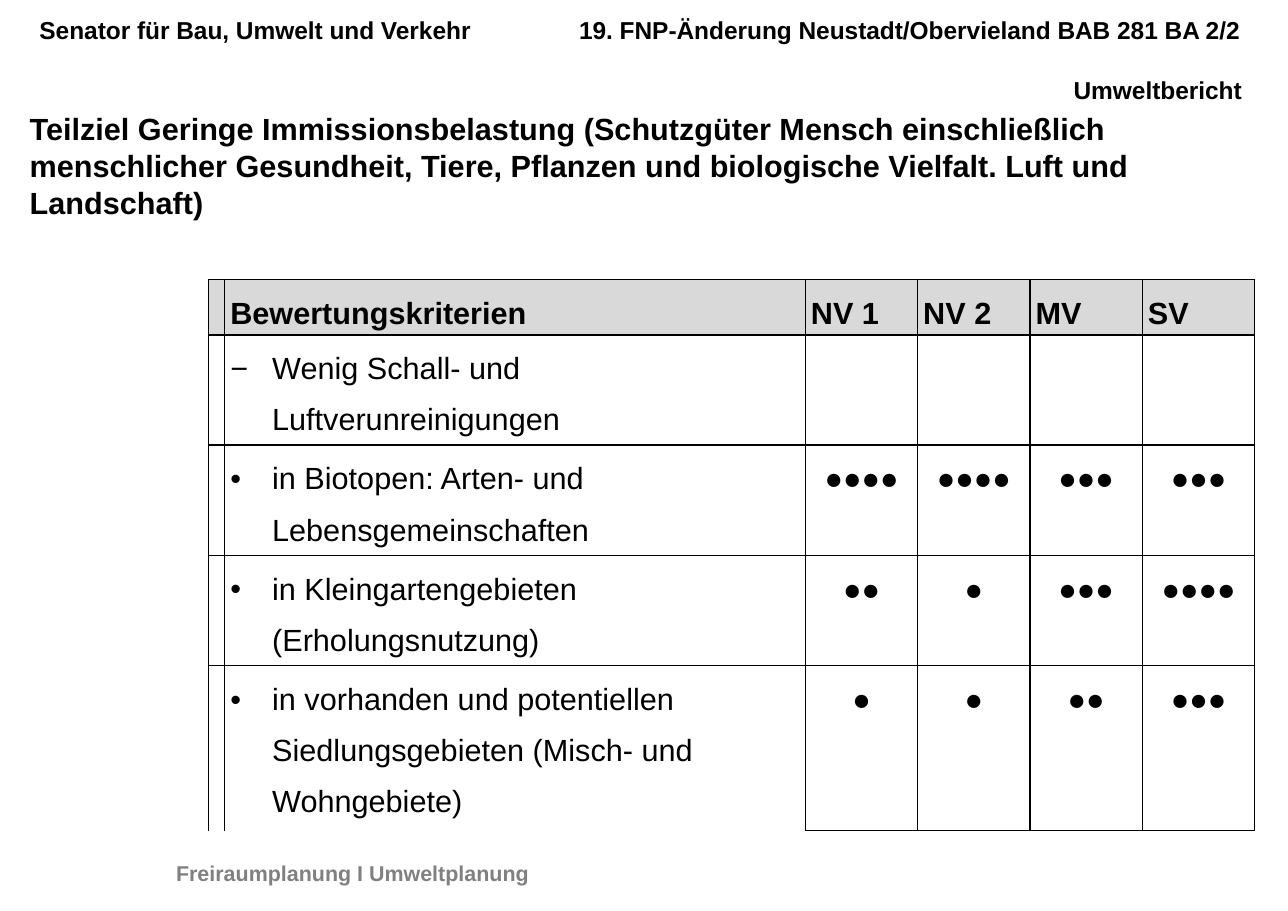
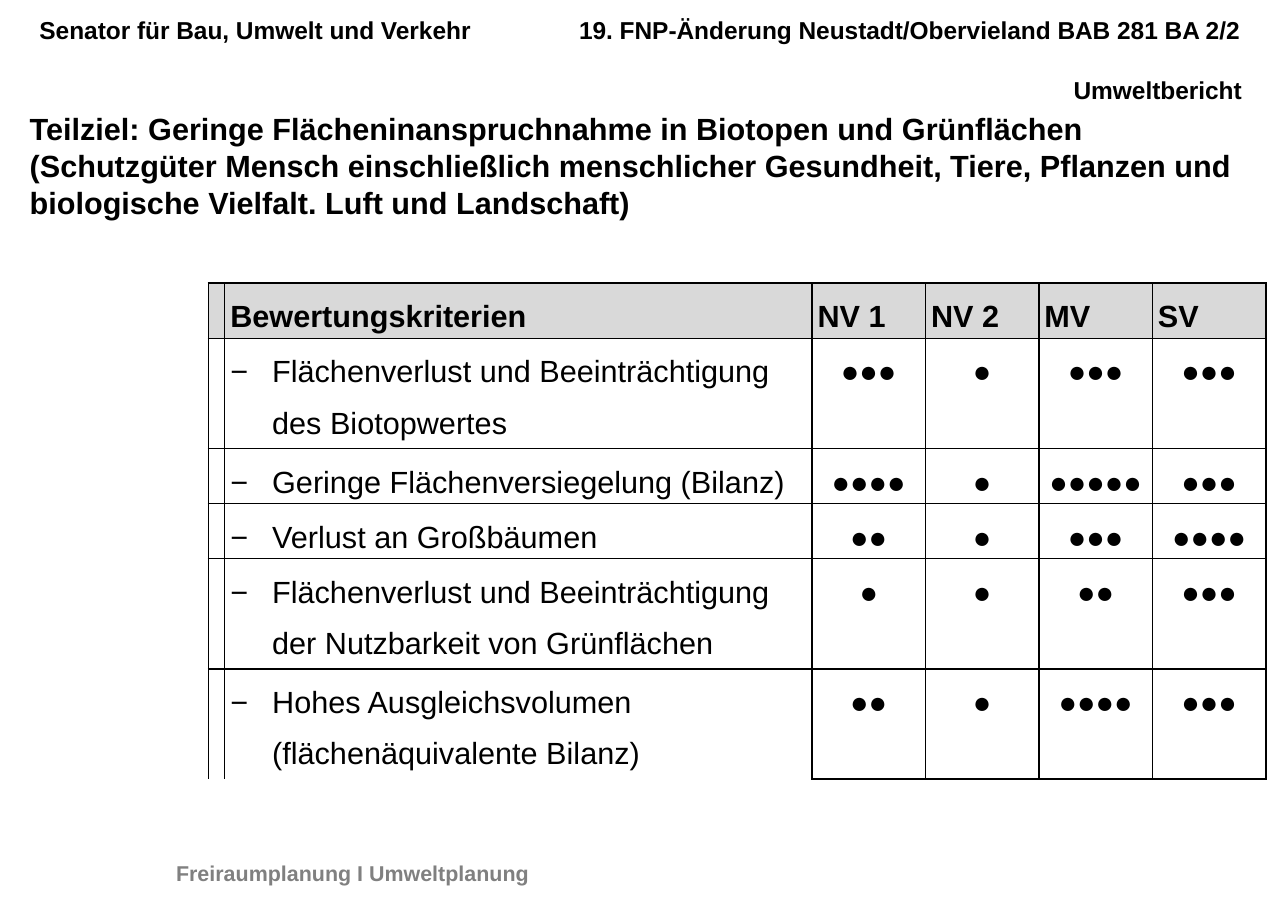
from lxml import etree
from pptx import Presentation
from pptx.dml.color import RGBColor
from pptx.enum.text import MSO_ANCHOR, PP_ALIGN
from pptx.oxml.ns import qn
from pptx.util import Inches, Pt

LEFT, RIGHT, CENTER = PP_ALIGN.LEFT, PP_ALIGN.RIGHT, PP_ALIGN.CENTER
TOP = MSO_ANCHOR.TOP
BLACK = RGBColor(0x00, 0x00, 0x00)
GRAY = RGBColor(0x80, 0x80, 0x80)
HEADER_FILL = RGBColor(0xD9, 0xD9, 0xD9)
FONT = "Arial"
BODY_SIZE = 20

# Content
AUTHORITY = "Senator für Bau, Umwelt und Verkehr"
PLAN = "19. FNP-Änderung Neustadt/Obervieland BAB 281 BA 2/2"
REPORT = "Umweltbericht"
FOOTER = "Freiraumplanung I Umweltplanung"
COLUMN_HEADS = ["Bewertungskriterien", "NV 1", "NV 2", "MV", "SV"]

# Each row: bullet, criterion, lines of text, dots per variant
SLIDES = [
    {
        "title": "Teilziel Geringe Immissionsbelastung (Schutzgüter Mensch einschließlich "
                 "menschlicher Gesundheit, Tiere, Pflanzen und biologische Vielfalt. "
                 "Luft und Landschaft)",
        "top": 2.54,
        "criterion_width": 5.27,
        "score_width": 1.02,
        "rows": [
            ("−", "Wenig Schall- und Luftverunreinigungen", 2, (0, 0, 0, 0)),
            ("•", "in Biotopen: Arten- und Lebensgemeinschaften", 2, (4, 4, 3, 3)),
            ("•", "in Kleingartengebieten (Erholungsnutzung)", 2, (2, 1, 3, 4)),
            ("•", "in vorhanden und potentiellen Siedlungsgebieten "
                  "(Misch- und Wohngebiete)", 3, (1, 1, 2, 3)),
        ],
    },
    {
        "title": "Teilziel: Geringe Flächeninanspruchnahme in Biotopen und Grünflächen "
                 "(Schutzgüter Mensch einschließlich menschlicher Gesundheit, Tiere, "
                 "Pflanzen und biologische Vielfalt. Luft und Landschaft)",
        "top": 2.57,
        "criterion_width": 5.33,
        "score_width": 1.03,
        "rows": [
            ("−", "Flächenverlust und Beeinträchtigung des Biotopwertes", 2, (3, 1, 3, 3)),
            ("−", "Geringe Flächenversiegelung (Bilanz)", 1, (4, 1, 5, 3)),
            ("−", "Verlust an Großbäumen", 1, (2, 1, 3, 4)),
            ("−", "Flächenverlust und Beeinträchtigung der Nutzbarkeit von Grünflächen",
             2, (1, 1, 2, 3)),
            ("−", "Hohes Ausgleichsvolumen (flächenäquivalente Bilanz)", 2, (2, 1, 4, 3)),
        ],
    },
]

# Table layout
TABLE_LEFT = 1.89
MARKER_WIDTH = 0.15
LINE_HEIGHT = 0.5
BULLET_INDENT = 0.38


def add_run(paragraph, text, size, color=BLACK, bold=True):
    run = paragraph.add_run()
    run.text = text
    run.font.name = FONT
    run.font.size = Pt(size)
    run.font.bold = bold
    run.font.color.rgb = color


def add_text_frame(slide, left, top, width, height, inset=(0.1, 0.05), wrap=True):
    box = slide.shapes.add_textbox(Inches(left), Inches(top), Inches(width), Inches(height))
    frame = box.text_frame
    frame.word_wrap = wrap
    frame.margin_left = frame.margin_right = Inches(inset[0])
    frame.margin_top = frame.margin_bottom = Inches(inset[1])
    return frame


def add_right_tab(paragraph, position):
    tabs = etree.SubElement(paragraph._p.get_or_add_pPr(), qn("a:tabLst"))
    etree.SubElement(tabs, qn("a:tab"), pos=str(Inches(position)), algn="r")


def add_bullet(paragraph, character):
    properties = paragraph._p.get_or_add_pPr()
    properties.set("marL", str(Inches(BULLET_INDENT)))
    properties.set("indent", str(-Inches(BULLET_INDENT)))
    etree.SubElement(properties, qn("a:buFont"), typeface=FONT)
    etree.SubElement(properties, qn("a:buChar"), char=character)


def style_cell(cell, fill=None, open_bottom=False):
    cell.margin_left = cell.margin_right = Inches(0.05)
    cell.margin_top = cell.margin_bottom = 0
    cell.vertical_anchor = TOP
    properties = cell._tc.get_or_add_tcPr()
    for side in ("lnL", "lnR", "lnT", "lnB"):
        line = etree.SubElement(properties, qn("a:" + side), w=str(Pt(1)))
        if side == "lnB" and open_bottom:
            etree.SubElement(line, qn("a:noFill"))
        else:
            solid = etree.SubElement(line, qn("a:solidFill"))
            etree.SubElement(solid, qn("a:srgbClr"), val=str(BLACK))
    if fill is None:
        cell.fill.background()
    else:
        cell.fill.solid()
        cell.fill.fore_color.rgb = fill


def write_cell(cell, text, bold=False, align=LEFT, bullet=None):
    paragraph = cell.text_frame.paragraphs[0]
    paragraph.alignment = align
    paragraph.line_spacing = 1.5
    if bullet:
        add_bullet(paragraph, bullet)
    add_run(paragraph, text, BODY_SIZE, bold=bold)


def add_page_frame(slide):
    # Header lines
    frame = add_text_frame(slide, 0.26, 0.09, 11.11, 0.9)
    first = frame.paragraphs[0]
    add_right_tab(first, 10.9)
    add_run(first, AUTHORITY + "\t" + PLAN, 16)
    second = frame.add_paragraph()
    second.alignment = RIGHT
    second.space_before = Pt(20)
    add_run(second, REPORT, 16)
    # Footer
    frame = add_text_frame(slide, 1.5, 7.76, 3.47, 0.34, wrap=False)
    add_run(frame.paragraphs[0], FOOTER, 14, GRAY)


def add_criteria_table(slide, content):
    rows = content["rows"]
    widths = [MARKER_WIDTH, content["criterion_width"]] + [content["score_width"]] * 4
    heights = [LINE_HEIGHT] + [LINE_HEIGHT * lines for _, _, lines, _ in rows]
    table = slide.shapes.add_table(
        len(heights), len(widths), Inches(TABLE_LEFT), Inches(content["top"]),
        Inches(sum(widths)), Inches(sum(heights))).table
    table.first_row = table.horz_banding = False
    for column, width in zip(table.columns, widths):
        column.width = Inches(width)
    for row, height in zip(table.rows, heights):
        row.height = Inches(height)

    # Fills and borders: the first two columns stay open at the bottom
    for row_index in range(len(heights)):
        for column_index in range(len(widths)):
            style_cell(table.cell(row_index, column_index),
                       HEADER_FILL if row_index == 0 else None,
                       row_index == len(rows) and column_index < 2)

    # Text
    for column_index, head in enumerate(COLUMN_HEADS, 1):
        write_cell(table.cell(0, column_index), head, bold=True)
    for row_index, (bullet, criterion, _, scores) in enumerate(rows, 1):
        write_cell(table.cell(row_index, 1), criterion, bullet=bullet)
        for column_index, score in enumerate(scores, 2):
            if score:
                write_cell(table.cell(row_index, column_index), "●" * score, align=CENTER)


def main():
    presentation = Presentation()
    presentation.slide_width = Inches(11.69)
    presentation.slide_height = Inches(8.27)
    for content in SLIDES:
        slide = presentation.slides.add_slide(presentation.slide_layouts[6])
        add_page_frame(slide)
        title = add_text_frame(slide, 0.16, 0.94, 11.17, 1.12, inset=(0.11, 0.06))
        add_run(title.paragraphs[0], content["title"], BODY_SIZE)
        add_criteria_table(slide, content)
    presentation.save("out.pptx")


if __name__ == "__main__":
    main()
